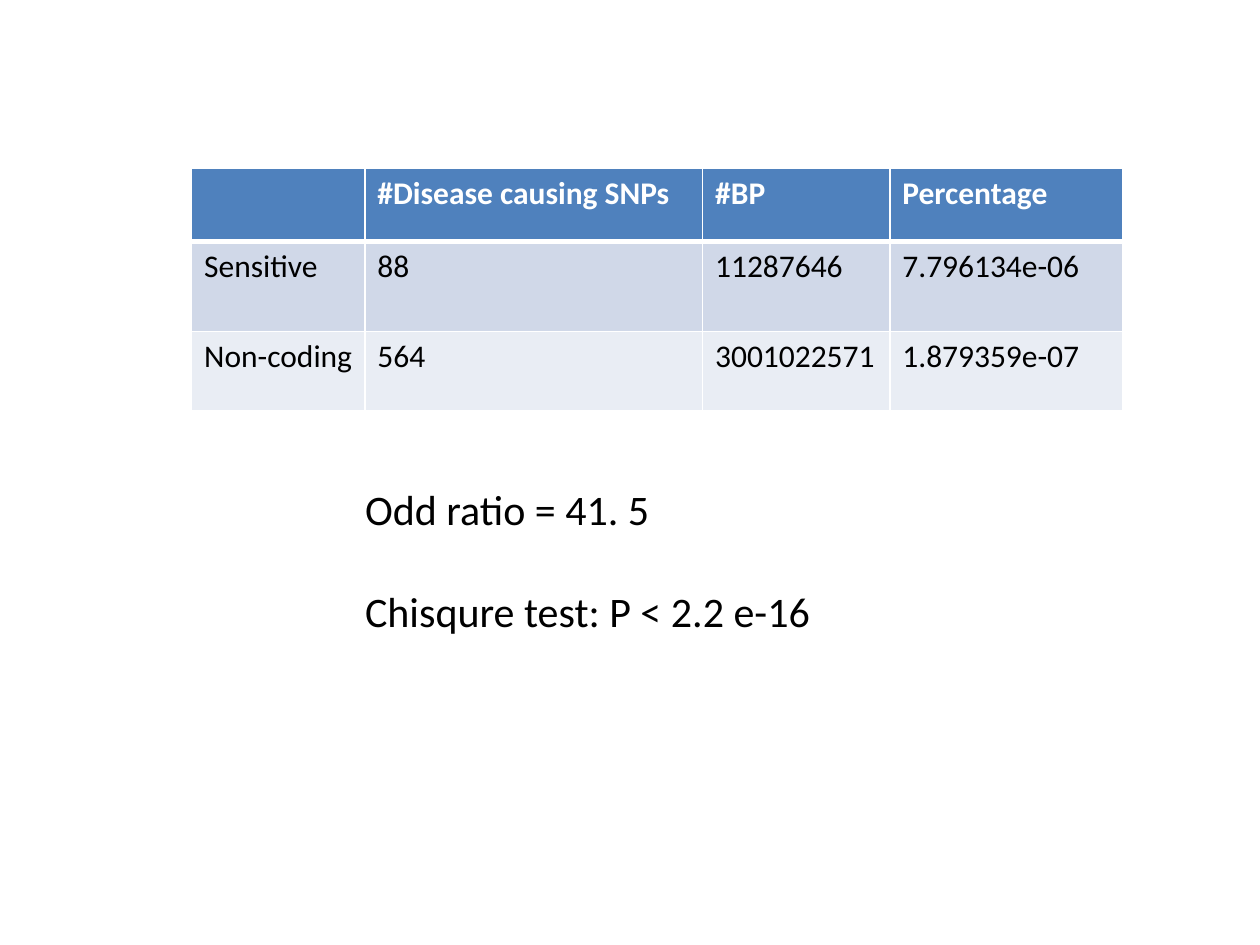
from dataclasses import dataclass

from lxml.etree import SubElement
from pptx import Presentation
from pptx.dml.color import RGBColor as Rgb
from pptx.enum.text import MSO_AUTO_SIZE as AutoSize
from pptx.oxml.ns import qn
from pptx.util import Pt


@dataclass(frozen=True)
class Theme:
    font: str = "Calibri"
    table_size: int = 18
    result_size: int = 24
    text: str = "000000"
    header_text: str = "FFFFFF"
    header_fill: str = "4F81BD"
    band_fills: tuple = ("D0D8E8", "E9EDF4")
    border: str = "FFFFFF"


THEME = Theme()

SNP_ROWS = [
    ("", "#Disease causing SNPs", "#BP", "Percentage"),
    ("Sensitive", "88", "11287646", "7.796134e-06"),
    ("Non-coding", "564", "3001022571", "1.879359e-07"),
]
COLUMN_WIDTHS = (99, 193, 107, 133)
ROW_HEIGHTS = (42, 51.5, 45.5)
RESULTS = ("Odd ratio = 41. 5", "Chisqure test: P < 2.2 e-16")


def write(paragraph, text, *, size, color=THEME.text, bold=False, before=0):
    paragraph.text = text
    paragraph.space_before = Pt(before)
    font = paragraph.font
    font.name, font.size, font.bold = THEME.font, Pt(size), bold
    font.color.rgb = Rgb.from_string(color)
    for run in paragraph.runs:
        run.font.size, run.font.bold, run.font.name = Pt(size), bold, THEME.font
        run.font.color.rgb = Rgb.from_string(color)


def set_borders(cell, bottom_width):
    properties = cell._tc.get_or_add_tcPr()
    for side, width in (("L", 1), ("R", 1), ("T", 1), ("B", bottom_width)):
        line = SubElement(properties, qn(f"a:ln{side}"), w=str(Pt(width)))
        fill = SubElement(line, qn("a:solidFill"))
        SubElement(fill, qn("a:srgbClr"), val=THEME.border)


def add_snp_table(slide, left, top):
    frame = slide.shapes.add_table(
        len(SNP_ROWS), len(COLUMN_WIDTHS), Pt(left), Pt(top),
        Pt(sum(COLUMN_WIDTHS)), Pt(sum(ROW_HEIGHTS)))
    table = frame.table
    for column, width in zip(table.columns, COLUMN_WIDTHS):
        column.width = Pt(width)
    for index, (row, height, texts) in enumerate(
            zip(table.rows, ROW_HEIGHTS, SNP_ROWS)):
        row.height = Pt(height)
        header = index == 0
        fill = THEME.header_fill if header else THEME.band_fills[index - 1]
        color = THEME.header_text if header else THEME.text
        for cell, text in zip(row.cells, texts):
            write(cell.text_frame.paragraphs[0], text,
                  size=THEME.table_size, color=color, bold=header)
            set_borders(cell, bottom_width=3 if header else 1)
            cell.fill.solid()
            cell.fill.fore_color.rgb = Rgb.from_string(fill)


def add_results(slide, left, top, width, height):
    frame = slide.shapes.add_textbox(
        Pt(left), Pt(top), Pt(width), Pt(height)).text_frame
    frame.word_wrap = True
    frame.auto_size = AutoSize.SHAPE_TO_FIT_TEXT
    for index, text in enumerate(RESULTS):
        paragraph = frame.add_paragraph() if index else frame.paragraphs[0]
        write(paragraph, text, size=THEME.result_size,
              before=29 if index else 0)


def main():
    deck = Presentation()
    deck.slide_width, deck.slide_height = Pt(720), Pt(540)
    slide = deck.slides.add_slide(deck.slide_layouts[6])
    add_snp_table(slide, left=109.5, top=96)
    add_results(slide, left=201.5, top=273, width=364.5, height=94.5)
    deck.save("out.pptx")


if __name__ == "__main__":
    main()
